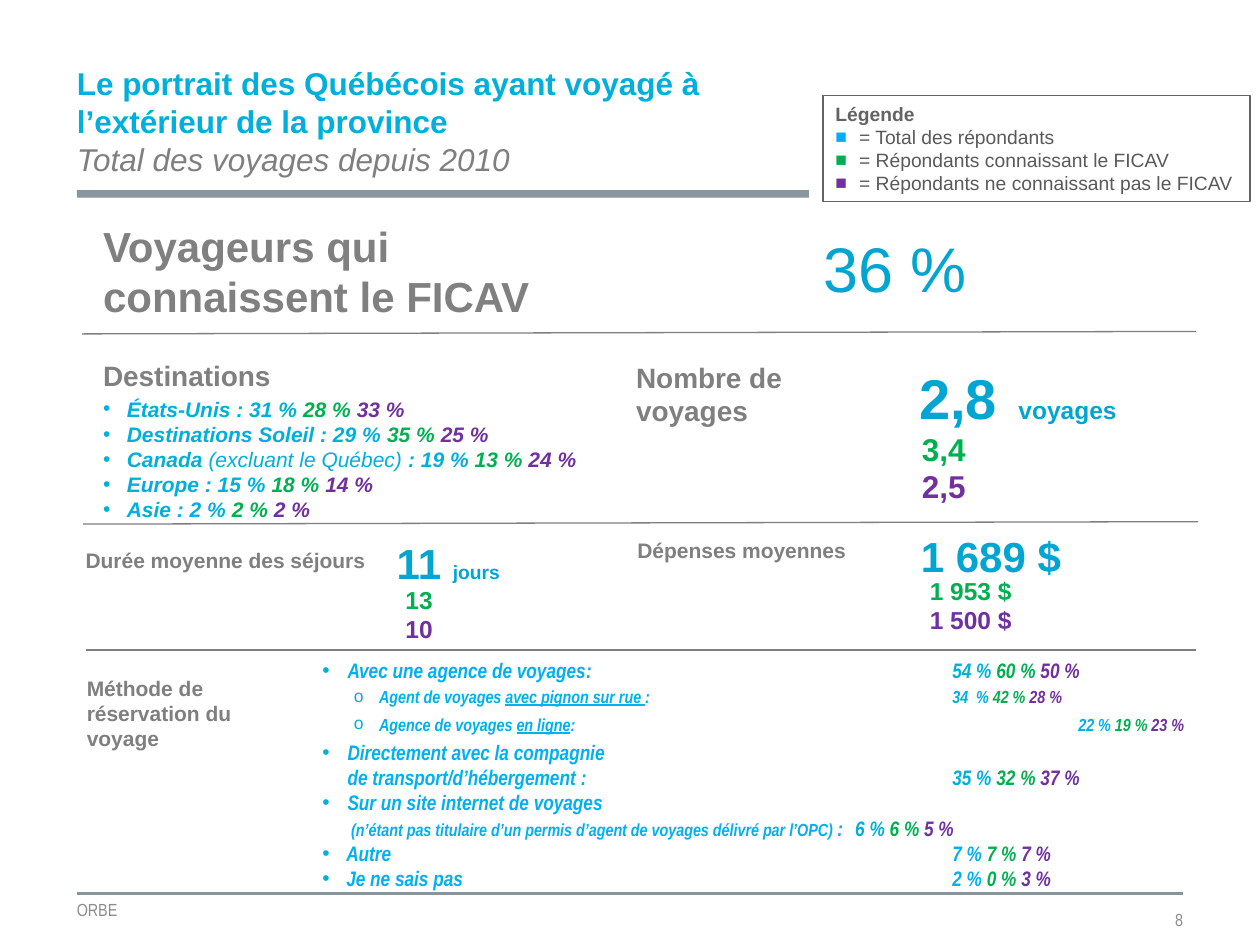
from pptx import Presentation
from pptx.dml.color import RGBColor
from pptx.enum.shapes import MSO_CONNECTOR as Connector, MSO_SHAPE as Shape
from pptx.enum.text import MSO_ANCHOR as Anchor, PP_ALIGN as Align
from pptx.oxml.ns import qn
from pptx.util import Pt
from lxml.etree import SubElement

GREY, MID_GREY, BAR, FOOT = "7F7F7F", "808080", "88959E", "8C8C8C"
CYAN, SKY, BLUE = "00AFDC", "00B0F0", "00A5D2"
GREEN, PURPLE = "00B050", "7030A0"
TAB_STEP = 72


def rgb(value):
    return RGBColor.from_string(value)


def style(span, size, color, bold=True, italic=False, underline=False, font="Arial"):
    span.font.name = font
    span.font.size = Pt(size)
    span.font.color.rgb = rgb(color)
    span.font.bold = bold
    span.font.italic = italic
    span.font.underline = underline


def prepare(frame, anchor=Anchor.TOP, inset=None):
    frame.word_wrap = True
    frame.vertical_anchor = anchor
    if inset is not None:
        frame.margin_left = frame.margin_right = Pt(inset)
        frame.margin_top = frame.margin_bottom = Pt(inset)


def add_frame(page, place, anchor=Anchor.TOP, inset=None):
    box = page.shapes.add_textbox(*map(Pt, place))
    prepare(box.text_frame, anchor, inset)
    return box.text_frame


def add_label(page, place, text, size, color, bold=True, font="Arial",
              align=Align.LEFT, anchor=Anchor.TOP, inset=None):
    frame = add_frame(page, place, anchor, inset)
    frame.text = text
    para = frame.paragraphs[0]
    para.alignment = align
    style(para.runs[0], size, color, bold, font=font)


def add_para(frame, spans, **shared):
    """Write one paragraph; each span is (text, colour, own style)."""
    first = frame.paragraphs[0]
    para = frame.add_paragraph() if first.runs else first
    for text, color, own in spans:
        for number, piece in enumerate(text.split("\n")):
            if number:
                para.add_line_break()
            if piece:
                span = para.add_run()
                span.text = piece
                style(span, color=color, **{**shared, **own})
    return para


def indent(para, left, first=0):
    props = para._p.get_or_add_pPr()
    props.set("marL", str(Pt(left)))
    props.set("indent", str(Pt(first)))
    return props


def add_bullet(para, char, color, left=13.6, hang=13.6):
    props = indent(para, left, -hang)
    SubElement(SubElement(props, qn("a:buClr")), qn("a:srgbClr"), val=color)
    SubElement(props, qn("a:buFont"), typeface="Arial")
    SubElement(props, qn("a:buChar"), char=char)


def trio(total, aware, unaware, color=CYAN, **own):
    """Values for all respondents, those aware and those unaware."""
    return [(f"{total} % ", color, own), (f"{aware} % ", GREEN, own),
            (f"{unaware} %", PURPLE, own)]


def add_rule(page, start, end, color=GREY, width=0.75):
    rule = page.shapes.add_connector(Connector.STRAIGHT, *map(Pt, start + end))
    rule.line.color.rgb = rgb(color)
    rule.line.width = Pt(width)
    SubElement(rule._element.spPr, qn("a:effectLst"))


def add_rect(page, place):
    rect = page.shapes.add_shape(Shape.RECTANGLE, *map(Pt, place))
    rect.shadow.inherit = False
    return rect


def add_comparison(page, place, aware, unaware, size):
    frame = add_frame(page, place)
    for text, color in ((aware, GREEN), (unaware, PURPLE)):
        add_para(frame, [(text, color, {})], size=size)


def add_header(page):
    bar = add_rect(page, (43.9, 108.7, 418.3, 4.3))
    bar.fill.solid()
    bar.fill.fore_color.rgb = rgb(BAR)
    bar.line.fill.background()
    title = add_frame(page, (43.9, 29.5, 418.3, 79.2), Anchor.MIDDLE, 0)
    add_para(title, [
        ("Le portrait des Québécois ayant voyagé à l’extérieur de la province\n", CYAN, {}),
        ("Total des voyages depuis 2010", GREY, {"bold": False, "italic": True}),
    ], size=18)


def add_legend(page):
    rect = add_rect(page, (470.2, 54.7, 244.1, 60.5))
    rect.fill.background()
    rect.line.color.rgb = rgb("636363")
    rect.line.width = Pt(0.75)
    frame = rect.text_frame
    prepare(frame)
    add_para(frame, [("Légende", "636363", {})], size=11).alignment = Align.LEFT
    for text, color in (("= Total des répondants", SKY),
                        ("= Répondants connaissant le FICAV", GREEN),
                        ("= Répondants ne connaissant pas le FICAV", PURPLE)):
        para = add_para(frame, [(text, "595959", {})], size=11, bold=False)
        para.alignment = Align.LEFT
        add_bullet(para, "■", color)


def add_destinations(page):
    frame = add_frame(page, (51.8, 201.6, 289.4, 97.2))
    add_para(frame, [("Destinations", MID_GREY, {})], size=16)
    places = [
        ([("États-Unis : ", CYAN, {})], (31, 28, 33)),
        ([("Destinations Soleil : ", CYAN, {})], (29, 35, 25)),
        ([("Canada ", CYAN, {}), ("(excluant le Québec)", CYAN, {"bold": False}),
          (" : ", CYAN, {})], (19, 13, 24)),
        ([("Europe : ", CYAN, {})], (15, 18, 14)),
        ([("Asie : ", CYAN, {})], (2, 2, 2)),
    ]
    for number, (name, values) in enumerate(places):
        para = add_para(frame, name + trio(*values), size=12, italic=True)
        para.space_before = Pt(0 if number else 2)
        add_bullet(para, "•", CYAN)


def add_booking(page):
    frame = add_frame(page, (177.1, 372.2, 536.4, 109.4))
    small, lined = {"size": 10}, {"size": 10, "underline": True}
    # Spans, bullet, left indent, space before
    rows = [
        ([("Avec une agence de voyages", SKY, {}), (": \t\t\t", CYAN, {})]
         + trio(54, 60, 50), "•", 14.4, 2),
        ([("Agent de voyages ", SKY, small), ("avec pignon sur rue ", SKY, lined),
          (": \t\t\t", CYAN, small)] + trio("34 ", 42, 28, **small), "o", 32.4, 2),
        ([("Agence de voyages ", SKY, small), ("en ligne", SKY, lined),
          (":", SKY, small), ("\t\t\t\t", SKY, {})]
         + trio(22, 19, 23, SKY, **small), "o", 32.4, 2),
        ([("Directement avec la compagnie\nde transport/d’hébergement", SKY, {}),
          (" : \t\t\t", CYAN, {})] + trio(35, 32, 37), "•", 14.4, 2),
        ([("Sur un site internet de voyages", SKY, {})], "•", 14.4, 0),
        ([("(n’étant pas titulaire d’un permis d’agent de voyages délivré par l’OPC)",
           SKY, small), (" ", SKY, {}), (": \t", CYAN, {})] + trio(6, 6, 5), None, 16.5, 0),
        ([("Autre\t\t\t\t\t", SKY, {})] + trio(7, 7, 7, SKY), "•", 13.7, 0),
        ([("Je ne sais pas\t\t\t\t", SKY, {})] + trio(2, 0, 3, SKY), "•", 13.7, 0),
    ]
    for spans, char, left, before in rows:
        para = add_para(frame, spans, size=12, italic=True, font="Arial Narrow")
        para.space_before = Pt(before)
        if char == "o":
            para.level = 1
        if char:
            add_bullet(para, char, CYAN, left, min(left, 14.4))
        else:
            indent(para, left)
        # Tab grid that lines up the percentages
        para._p.get_or_add_pPr().set("defTabSz", str(Pt(TAB_STEP)))


def main():
    deck = Presentation()
    deck.slide_width, deck.slide_height = Pt(720), Pt(540)
    page = deck.slides.add_slide(deck.slide_layouts[6])

    # Header, footer and section rules
    add_header(page)
    add_legend(page)
    add_rule(page, (43.9, 510.5), (676.1, 510.5), BAR, 1.5)
    foot = {"bold": False, "font": "Arial Narrow", "anchor": Anchor.MIDDLE, "inset": 0}
    add_label(page, (43.9, 510.5, 201.6, 18.7), "ORBE", 10, FOOT, **foot)
    add_label(page, (471.6, 516.2, 204.5, 18.7), "8", 10, FOOT, align=Align.RIGHT, **foot)
    add_rule(page, (46.8, 190.8), (683.3, 189.4))
    add_rule(page, (47.5, 299.5), (684.7, 298.1))
    add_rule(page, (49, 371.5), (683.3, 371.5))

    # Share of travellers
    add_label(page, (51.8, 122.4, 306, 65.5), "Voyageurs qui connaissent le FICAV", 24, MID_GREY)
    add_label(page, (399.6, 122.4, 223.9, 60.5), "36 %", 36, BLUE, bold=False,
              align=Align.CENTER, anchor=Anchor.MIDDLE)

    # Destinations and number of trips
    add_destinations(page)
    add_label(page, (356.4, 202.3, 145.4, 33.8), "Nombre de voyages", 16, GREY)
    trips = add_frame(page, (501.8, 192.2, 159.8, 67))
    add_para(trips, [("2,8", BLUE, {}), (" ", BLUE, {"size": 44}),
                     ("voyages", BLUE, {"size": 14})], size=32).alignment = Align.CENTER
    add_comparison(page, (519.8, 241.9, 61.9, 51.1), "3,4", "2,5", 18)

    # Length of stay and spending
    add_label(page, (41.8, 309.6, 185, 74.2), "Durée moyenne des séjours", 12, GREY)
    stay = add_frame(page, (219.6, 303.8, 133.2, 50.4))
    add_para(stay, [("11 ", BLUE, {}), ("jours", BLUE, {"size": 11})], size=24)
    add_comparison(page, (224.6, 330.5, 61.9, 41), "13", "10", 14)
    add_label(page, (357.1, 303.8, 162, 74.2), "Dépenses moyennes", 12, GREY)
    add_label(page, (519.1, 299.5, 138.2, 50.4), "1 689 $", 24, BLUE)
    add_comparison(page, (524.2, 325.4, 102.2, 41), "1 953 $", "1 500 $", 14)

    # Booking method
    add_label(page, (42.5, 382.3, 130.3, 33.8), "Méthode de réservation du voyage", 12, GREY)
    add_booking(page)

    deck.save("out.pptx")


if __name__ == "__main__":
    main()
